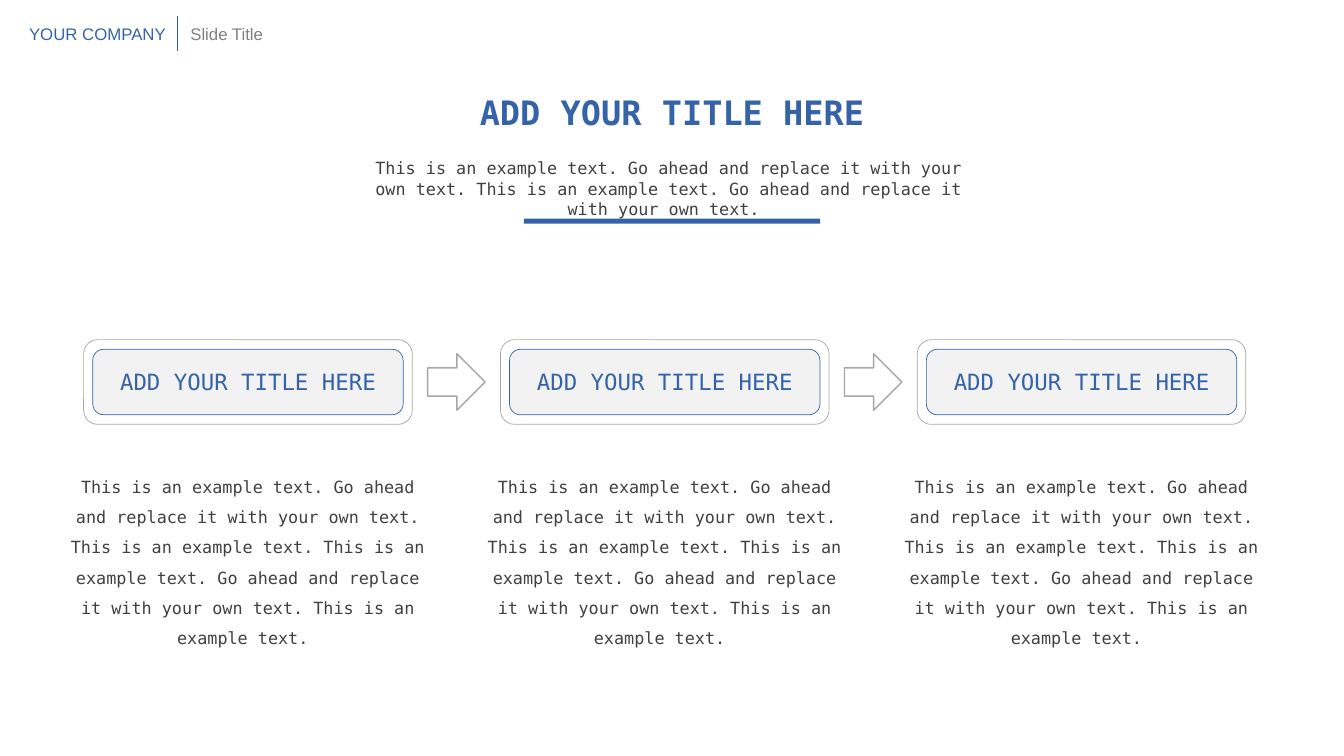
from dataclasses import dataclass

from lxml.etree import SubElement
from pptx import Presentation
from pptx.dml.color import RGBColor
from pptx.enum.shapes import MSO_CONNECTOR, MSO_SHAPE
from pptx.enum.text import MSO_ANCHOR, MSO_AUTO_SIZE, PP_ALIGN
from pptx.oxml.ns import qn
from pptx.util import Inches, Pt

BLUE = RGBColor(0x35, 0x63, 0xA8)
DARK = RGBColor(0x40, 0x40, 0x40)
GREY = RGBColor(0x80, 0x80, 0x80)
EDGE = RGBColor(0xA6, 0xA6, 0xA6)
PALE = RGBColor(0xF2, 0xF2, 0xF2)

MONO = "DejaVu Sans Mono"
SANS = "Arial"

WIDE, HIGH = Inches(13.33), Inches(7.5)
COL, ROW = WIDE / 160, HIGH / 90

FIRST, PITCH, COUNT = 29.52, 49.62, 3
STEP_ROW, BODY_ROW = 45.48, 62.82

HEAD = "ADD YOUR TITLE HERE"
HINT = "This is an example text. "
CALL = "Go ahead and replace it with your own text. "
LEAD = (HINT + CALL) * 2
BODY = (HINT + CALL + HINT) * 2


@dataclass(frozen=True)
class Box:
    x: float
    y: float
    wide: float
    high: float

    def frame(self) -> tuple[int, int, int, int]:
        return (
            round((self.x - self.wide / 2) * COL),
            round((self.y - self.high / 2) * ROW),
            round(self.wide * COL),
            round(self.high * ROW),
        )


@dataclass(frozen=True)
class Type:
    size: int
    color: RGBColor
    face: str = MONO
    bold: bool = False
    align: PP_ALIGN = PP_ALIGN.CENTER
    space: float = 1.0
    wrap: bool = True


@dataclass(frozen=True)
class Look:
    kind: MSO_SHAPE
    fill: RGBColor | None = None
    line: RGBColor | None = None
    width: float = 0.5


TITLE = Type(24, BLUE, bold=True)
INTRO = Type(12, DARK)
LABEL = Type(16, BLUE)
NOTE = Type(12, DARK, space=1.5)
FIRM = Type(12, BLUE, SANS, align=PP_ALIGN.LEFT, wrap=False)
TOPIC = Type(12, GREY, SANS, align=PP_ALIGN.LEFT, wrap=False)

PANEL = Look(MSO_SHAPE.ROUNDED_RECTANGLE, PALE, BLUE)
RING = Look(MSO_SHAPE.ROUNDED_RECTANGLE, line=EDGE)
ARROW = Look(MSO_SHAPE.RIGHT_ARROW, line=EDGE, width=1)
BAR = Look(MSO_SHAPE.RECTANGLE, BLUE)


def write(shape, text: str, style: Type) -> None:
    frame = shape.text_frame
    frame.text = text
    frame.word_wrap = style.wrap
    para = frame.paragraphs[0]
    para.alignment = style.align
    para.line_spacing = style.space
    para.font.name = style.face
    para.font.size = Pt(style.size)
    para.font.bold = style.bold
    para.font.color.rgb = style.color


def grow(shape, text: str, style: Type) -> None:
    write(shape, text, style)
    shape.text_frame.vertical_anchor = MSO_ANCHOR.TOP
    shape.text_frame.auto_size = MSO_AUTO_SIZE.SHAPE_TO_FIT_TEXT


def add_text(shapes, box: Box, text: str, style: Type) -> None:
    grow(shapes.add_textbox(*box.frame()), text, style)


def add_form(shapes, box: Box, look: Look):
    shape = shapes.add_shape(look.kind, *box.frame())
    shape.shadow.inherit = False
    if look.fill is None:
        shape.fill.background()
    else:
        shape.fill.solid()
        shape.fill.fore_color.rgb = look.fill
    if look.line is None:
        shape.line.fill.background()
    else:
        shape.line.color.rgb = look.line
        shape.line.width = Pt(look.width)
    return shape


def add_title(shapes) -> None:
    title = shapes.title
    title.left, title.top, title.width, title.height = Box(80, 13.32, 63.48, 6).frame()
    grow(title, HEAD, TITLE)


def add_brand(shapes) -> None:
    group = shapes.add_group_shape().shapes
    x = round(21.12 * COL)
    rule = group.add_connector(
        MSO_CONNECTOR.STRAIGHT, x, round(1.92 * ROW), x, round(6.12 * ROW)
    )
    rule.line.color.rgb = BLUE
    rule.line.width = Pt(0.5)
    SubElement(rule.element.spPr, qn("a:effectLst"))
    add_text(group, Box(11.7, 4.08, 18.84, 3.6), "YOUR COMPANY", FIRM)
    add_text(group, Box(28.14, 4.08, 13.32, 3.6), "Slide Title", TOPIC)


def add_step(shapes, x: float) -> None:
    panel = add_form(shapes, Box(x, STEP_ROW, 36.96, 7.8), PANEL)
    write(panel, HEAD, LABEL)
    panel.text_frame.vertical_anchor = MSO_ANCHOR.MIDDLE
    add_form(shapes, Box(x, STEP_ROW, 39.12, 10.08), RING)
    add_text(shapes, Box(x, BODY_ROW, 45.6, 15.72), BODY, NOTE)


def main() -> None:
    deck = Presentation()
    deck.slide_width, deck.slide_height = WIDE, HIGH
    shapes = deck.slides.add_slide(deck.slide_layouts[5]).shapes

    add_title(shapes)
    add_text(shapes, Box(79.62, 21.24, 74.04, 6), LEAD, INTRO)
    for step in range(COUNT):
        x = FIRST + step * PITCH
        add_step(shapes, x)
        if step < COUNT - 1:
            add_form(shapes, Box(x + PITCH / 2, STEP_ROW, 6.84, 6.72), ARROW)
    add_form(shapes, Box(80, 26.34, 35.28, 0.6), BAR)
    add_brand(shapes)

    deck.save("out.pptx")


if __name__ == "__main__":
    main()
